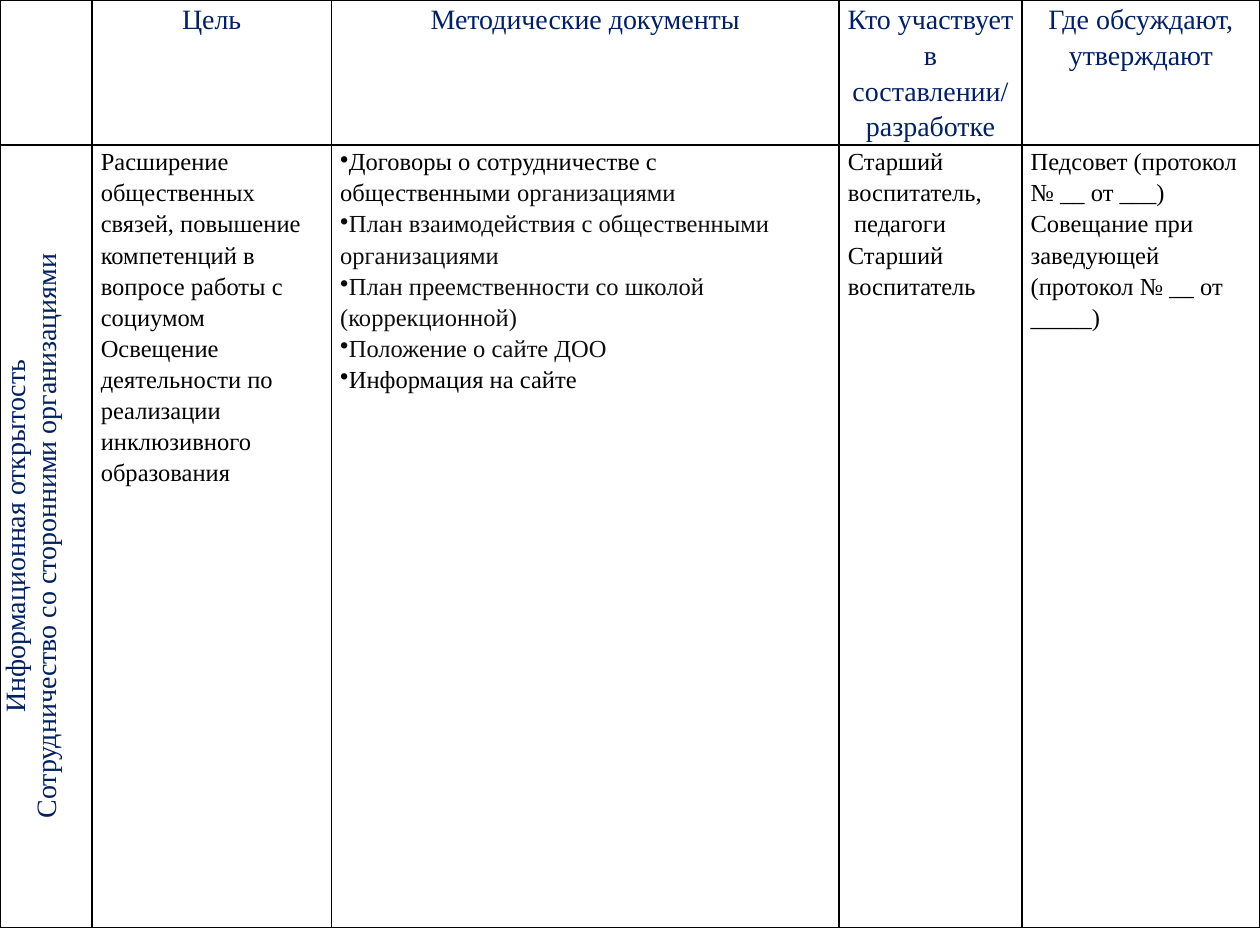
from dataclasses import dataclass

from lxml import etree
from pptx import Presentation
from pptx.dml.color import RGBColor
from pptx.enum.text import PP_ALIGN
from pptx.oxml.ns import qn
from pptx.util import Inches, Pt

CENTER = PP_ALIGN.CENTER
LEFT = PP_ALIGN.LEFT


@dataclass(frozen=True)
class Theme:
    """Colours, font and type sizes of the slide."""
    font: str = "Times New Roman"
    heading: str = "002060"
    body: str = "000000"
    soft: str = "0D0D0D"
    paper: str = "FFFFFF"
    border: str = "000000"
    heading_size: int = 16
    body_size: int = 14
    border_width: int = 1
    spacing: float = 1.15


THEME = Theme()
COLS = [0.73, 1.9, 4.03, 1.45, 1.89]
ROWS = [1.15, 6.21]
HEADERS = [
    "Цель",
    "Методические документы",
    "Кто участвует в составлении/ разработке",
    "Где обсуждают, утверждают",
]
ROW_LABEL = ["Информационная открытость", "Сотрудничество со сторонними организациями"]
GOALS = [
    "Расширение общественных связей, повышение компетенций в вопросе работы с социумом",
    "Освещение деятельности по реализации инклюзивного образования",
]
DOCUMENTS = [
    [("Договоры о сотрудничестве с общественными ", THEME.body), ("организациями", THEME.soft)],
    [("План взаимодействия с общественными организациями", THEME.soft)],
    [("План преемственности со школой (коррекционной)", THEME.soft)],
    [("Положение о сайте ДОО", THEME.soft)],
    [("Информация на сайте", THEME.body)],
]
AUTHORS = ["Старший воспитатель,", " педагоги", "Старший воспитатель"]
APPROVAL = [
    "Педсовет (протокол № __ от ___)",
    "Совещание при заведующей (протокол № __ от _____)",
]


def plain(lines, color):
    """Turn lines into paragraphs of one run each."""
    return [[(line, color)] for line in lines]


def style_cell(cell, inset):
    """Set the margins, borders and fill of a cell."""
    cell.margin_left = cell.margin_right = Inches(inset)
    cell.margin_top = cell.margin_bottom = 0
    tcPr = cell._tc.get_or_add_tcPr()
    for side in ("a:lnL", "a:lnR", "a:lnT", "a:lnB"):
        ln = etree.SubElement(tcPr, qn(side), w=str(Pt(THEME.border_width)))
        fill = etree.SubElement(ln, qn("a:solidFill"))
        etree.SubElement(fill, qn("a:srgbClr"), val=THEME.border)
    cell.fill.solid()
    cell.fill.fore_color.rgb = RGBColor.from_string(THEME.paper)


def write_cell(cell, paragraphs, size, align=LEFT, spacing=THEME.spacing, bullet=None, after=0):
    """Write paragraphs of coloured runs, with space after the last one."""
    tf = cell.text_frame
    for i, runs in enumerate(paragraphs):
        p = tf.paragraphs[0] if i == 0 else tf.add_paragraph()
        p.alignment = align
        p.line_spacing = spacing
        for text, color in runs:
            r = p.add_run()
            r.text = text
            r.font.name = THEME.font
            r.font.size = Pt(size)
            r.font.color.rgb = RGBColor.from_string(color)
        if bullet:
            etree.SubElement(p._p.get_or_add_pPr(), qn("a:buChar"), char=bullet)
    if after:
        p.space_after = Pt(after)


def add_grid(s):
    """Add the empty bordered table."""
    table = s.shapes.add_table(
        len(ROWS), len(COLS), 0, 0, Inches(sum(COLS)), Inches(sum(ROWS))
    ).table
    table.first_row = table.horz_banding = False
    for column, width in zip(table.columns, COLS):
        column.width = Inches(width)
    for row, height, inset in zip(table.rows, ROWS, (0.06, 0.07)):
        row.height = Inches(height)
        for cell in row.cells:
            style_cell(cell, inset)
    return table


def fill_headers(table):
    """Write the column headings and the vertical row label."""
    for col, text in enumerate(HEADERS, 1):
        write_cell(table.cell(0, col), plain([text], THEME.heading), THEME.heading_size, CENTER)
    label = table.cell(1, 0)
    label._tc.get_or_add_tcPr().set("vert", "vert270")
    write_cell(label, plain(ROW_LABEL, THEME.heading), THEME.heading_size, CENTER, spacing=1.0)


def fill_body(table):
    """Write the four content cells."""
    size = THEME.body_size
    write_cell(table.cell(1, 1), plain(GOALS, THEME.body), size, after=10)
    write_cell(table.cell(1, 2), DOCUMENTS, size, bullet="•")
    write_cell(table.cell(1, 3), plain(AUTHORS, THEME.body), size, after=10)
    write_cell(table.cell(1, 4), plain(APPROVAL, THEME.body), size)


def main():
    """Build the slide and save it."""
    prs = Presentation()
    prs.slide_width, prs.slide_height = Inches(10), Inches(7.5)
    s = prs.slides.add_slide(prs.slide_layouts[6])
    table = add_grid(s)
    fill_headers(table)
    fill_body(table)
    prs.save("out.pptx")


if __name__ == "__main__":
    main()
